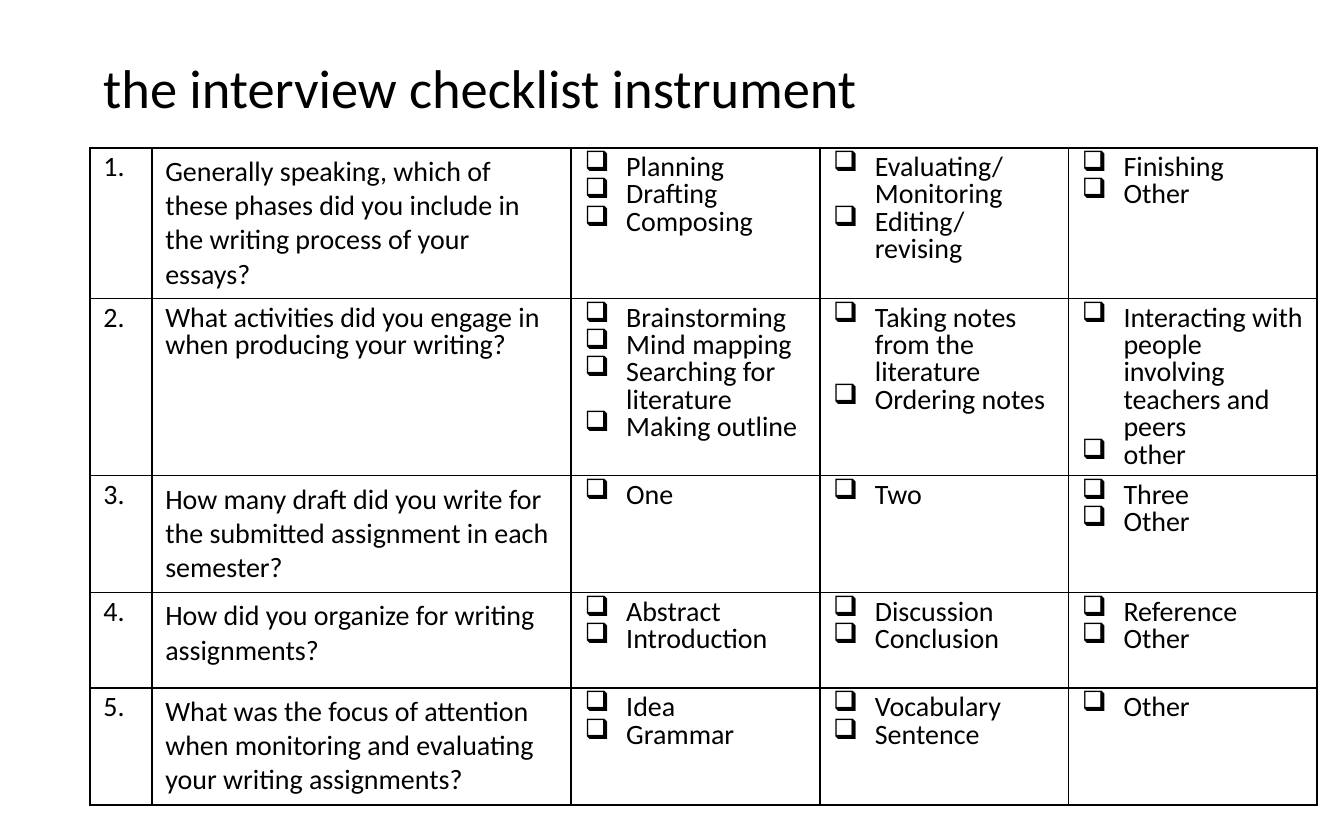
import pptx
import pptx.util
import pptx.dml.color
import pptx.enum.text
import pptx.oxml
import pptx.oxml.ns

WIDE, HIGH = 10, 6.25
FONT, INK = "Calibri", "000000"
COLS = [0.46, 3.12, 1.85, 1.85, 1.85]
ROWS = [1.12, 1.32, 0.87, 0.71, 0.87]
TIGHT = 0.8
HANG = pptx.util.Inches(0.31)

# Each row: question, its line spacing, three lists of choices
ITEMS = [
    ("Generally speaking, which of these phases did you include in the "
     "writing process of your essays?", 1.0,
     ["Planning", "Drafting", "Composing"],
     ["Evaluating/ Monitoring", "Editing/ revising"],
     ["Finishing", "Other"]),
    ("What activities did you engage in when producing your writing?", TIGHT,
     ["Brainstorming", "Mind mapping", "Searching for literature",
      "Making outline"],
     ["Taking notes from the literature", "Ordering notes"],
     ["Interacting with people involving teachers and peers", "other"]),
    ("How many draft did you write for the submitted assignment in each "
     "semester?", 1.0,
     ["One"], ["Two"], ["Three", "Other"]),
    ("How did you organize for writing assignments?", 1.0,
     ["Abstract", "Introduction"], ["Discussion", "Conclusion"],
     ["Reference", "Other"]),
    ("What was the focus of attention when monitoring and evaluating your "
     "writing assignments?", 1.0,
     ["Idea", "Grammar"], ["Vocabulary", "Sentence"], ["Other"]),
]


def color(code):
    return pptx.dml.color.RGBColor.from_string(code)


def style(para, size):
    para.font.name = FONT
    para.font.size = pptx.util.Pt(size)
    para.font.color.rgb = color(INK)


def node(tag, inner="", **attrs):
    text = " ".join(f'{key}="{val}"' for key, val in attrs.items())
    space = pptx.oxml.ns.nsdecls("a")
    return pptx.oxml.parse_xml(f"<a:{tag} {space} {text}>{inner}</a:{tag}>")


def check(para):
    """Give a paragraph a hanging checkbox."""
    props = para._p.get_or_add_pPr()
    props.set("marL", str(HANG))
    props.set("indent", str(-HANG))
    props.append(node("buChar", char="❑"))


def border(cell):
    props = cell._tc.get_or_add_tcPr()
    fill = f'<a:solidFill><a:srgbClr val="{INK}"/></a:solidFill>'
    for spot, side in enumerate("LRTB"):
        props.insert(spot, node("ln" + side, fill, w=pptx.util.Pt(1)))


def write(cell, lines, gap, boxed=False):
    cell.fill.background()
    border(cell)
    cell.text_frame.text = "\n".join(lines)
    for para in cell.text_frame.paragraphs:
        para.line_spacing = gap
        if boxed:
            check(para)
        style(para, 15)


def title(slide, box, text):
    shape = slide.shapes.add_textbox(*map(pptx.util.Inches, box))
    frame = shape.text_frame
    frame.word_wrap = True
    frame.vertical_anchor = pptx.enum.text.MSO_ANCHOR.MIDDLE
    frame.text = text
    style(frame.paragraphs[0], 29.2)


def survey(slide, box):
    left, top, width, height = box
    shape = slide.shapes.add_table(len(ROWS), len(COLS),
                                   *map(pptx.util.Inches, box))
    table = shape.table
    table.first_row = table.horz_banding = False
    for col, share in zip(table.columns, COLS):
        col.width = pptx.util.Inches(width * share / sum(COLS))
    for row, share in zip(table.rows, ROWS):
        row.height = pptx.util.Inches(height * share / sum(ROWS))

    # Number, question, then the choices
    for row, (ask, gap, *lists) in enumerate(ITEMS):
        write(table.cell(row, 0), [f"{row + 1}."], TIGHT)
        write(table.cell(row, 1), [ask], gap)
        for col, names in enumerate(lists, 2):
            write(table.cell(row, col), names, TIGHT, boxed=True)


def main():
    deck = pptx.Presentation()
    deck.slide_width = pptx.util.Inches(WIDE)
    deck.slide_height = pptx.util.Inches(HIGH)
    slide = deck.slides.add_slide(deck.slide_layouts[6])
    left = 0.067 * WIDE
    title(slide, (left, 0.33, 8.83, 0.63),
          "the interview checklist instrument")
    survey(slide, (left, 1.1, sum(COLS), sum(ROWS)))
    deck.save("out.pptx")


if __name__ == "__main__":
    main()
